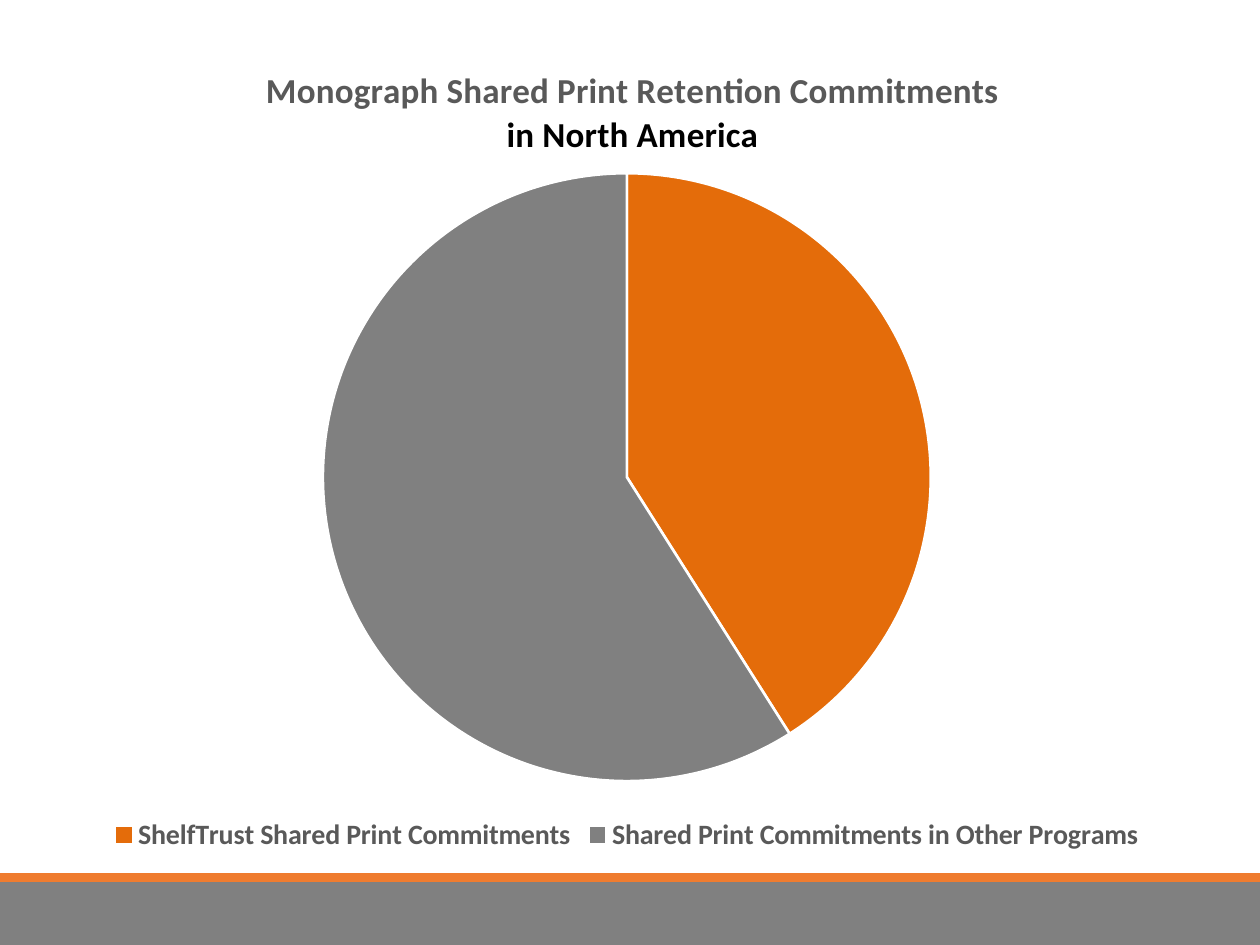
from dataclasses import dataclass

from lxml.etree import SubElement
from pptx import Presentation
from pptx.chart.data import CategoryChartData
from pptx.dml.color import RGBColor
from pptx.enum.chart import XL_CHART_TYPE, XL_LEGEND_POSITION
from pptx.enum.shapes import MSO_SHAPE
from pptx.enum.text import PP_ALIGN
from pptx.oxml.ns import qn
from pptx.util import Inches, Pt


@dataclass(frozen=True)
class Theme:
    font: str = "Calibri"
    title_size: int = 20
    legend_size: int = 16
    base_size: int = 10
    text: str = "595959"
    black: str = "000000"
    white: str = "FFFFFF"
    gray: str = "808080"
    orange: str = "E46C0A"
    stripe: str = "EF7C2F"


def rgb(value):
    return RGBColor.from_string(value)


def set_layout(element, **shares):
    """Place a chart part by shares of the chart's size."""
    layout = element.get_or_add_layout() if hasattr(element, "get_or_add_layout") else element.find(qn("c:layout"))
    if layout is None:
        layout = SubElement(element, qn("c:layout"))
        element.insert(0, layout)
    manual = SubElement(layout, qn("c:manualLayout"))
    if "w" in shares:
        SubElement(manual, qn("c:layoutTarget")).set("val", "inner")
    for axis in ("x", "y"):
        SubElement(manual, qn(f"c:{axis}Mode")).set("val", "edge")
    for name, share in shares.items():
        SubElement(manual, qn(f"c:{name}")).set("val", str(share))


class SlideBuilder:
    def __init__(self, presentation, theme):
        self.theme = theme
        self.width = presentation.slide_width
        self.height = presentation.slide_height
        self.slide = presentation.slides.add_slide(presentation.slide_layouts[6])

    def box(self, left, top, width, height):
        """Turn shares of the slide into lengths."""
        return (round(left * self.width), round(top * self.height),
                round(width * self.width), round(height * self.height))

    def band(self, top, height, color):
        shape = self.slide.shapes.add_shape(MSO_SHAPE.RECTANGLE, *self.box(0, top, 1, height))
        shape.shadow.inherit = False
        shape.fill.solid()
        shape.fill.fore_color.rgb = rgb(color)
        shape.line.fill.background()

    def style_font(self, font, size, color, bold=False):
        font.name = self.theme.font
        font.size = Pt(size)
        font.bold = bold
        font.color.rgb = rgb(color)

    def pie(self, area, series_name, slices):
        data = CategoryChartData()
        data.categories = [label for label, _, _ in slices]
        data.add_series(series_name, [value for _, value, _ in slices])
        chart = self.slide.shapes.add_chart(XL_CHART_TYPE.PIE, *self.box(*area), data).chart
        self.style_font(chart.font, self.theme.base_size, self.theme.black)

        plot = chart.plots[0]
        plot.vary_by_categories = True
        for index, (_, _, color) in enumerate(slices):
            slice_format = plot.series[0].points[index].format
            slice_format.fill.solid()
            slice_format.fill.fore_color.rgb = rgb(color)
            slice_format.line.color.rgb = rgb(self.theme.white)
            slice_format.line.width = Pt(1.5)

        chart.has_legend = True
        chart.legend.position = XL_LEGEND_POSITION.BOTTOM
        chart.legend.include_in_layout = False
        self.style_font(chart.legend.font, self.theme.legend_size, self.theme.text, bold=True)
        plot_area = chart.element.find(".//" + qn("c:plotArea"))
        set_layout(plot_area, x=0.25, y=0.17, w=0.5, h=0.74)
        return chart

    def chart_title(self, chart, lines):
        chart.has_title = True
        frame = chart.chart_title.text_frame
        for index, (text, color) in enumerate(lines):
            paragraph = frame.add_paragraph() if index else frame.paragraphs[0]
            paragraph.text = text
            paragraph.alignment = PP_ALIGN.CENTER
            self.style_font(paragraph.font, self.theme.title_size, color, bold=True)
            self.style_font(paragraph.runs[0].font, self.theme.title_size, color, bold=True)
        chart.chart_title.include_in_layout = False
        set_layout(chart.element.find(".//" + qn("c:title")), x=0.2, y=0.04)


def main():
    presentation = Presentation()
    presentation.slide_width, presentation.slide_height = Inches(10), Inches(7.5)
    theme = Theme()
    builder = SlideBuilder(presentation, theme)

    # Footer bands
    footer_top, stripe_height = 14 / 15, 0.07 / 7.5
    builder.band(footer_top, 1 - footer_top, theme.gray)
    builder.band(footer_top - stripe_height, stripe_height, theme.stripe)

    # Commitments chart
    chart = builder.pie((0.015, 0.032, 0.965, 0.876), "Series 1", [
        ("ShelfTrust Shared Print Commitments", 41, theme.orange),
        ("Shared Print Commitments in Other Programs", 59, theme.gray),
    ])
    builder.chart_title(chart, [
        ("Monograph Shared Print Retention Commitments", theme.text),
        ("in North America", theme.black),
    ])

    presentation.save("out.pptx")


if __name__ == "__main__":
    main()
